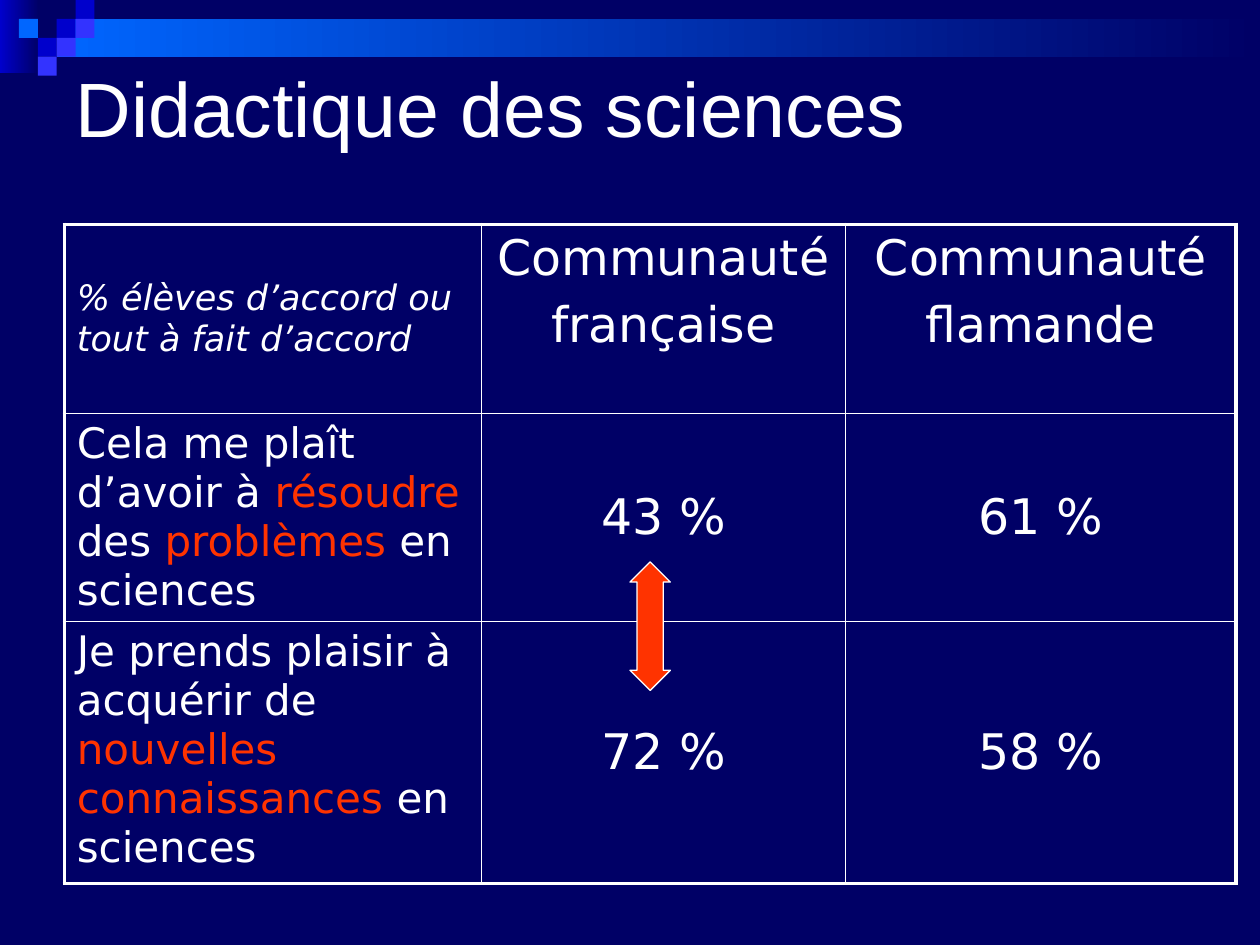
"""Build the "Didactique des sciences" slide comparing two school communities."""
from lxml import etree
from pptx import Presentation
from pptx.dml.color import RGBColor
from pptx.enum.shapes import MSO_SHAPE
from pptx.enum.text import MSO_ANCHOR, PP_ALIGN
from pptx.oxml.ns import qn
from pptx.util import Inches, Pt

LEFT, CENTER = PP_ALIGN.LEFT, PP_ALIGN.CENTER
TOP, MIDDLE = MSO_ANCHOR.TOP, MSO_ANCHOR.MIDDLE
RECTANGLE, DOUBLE_ARROW = MSO_SHAPE.RECTANGLE, MSO_SHAPE.UP_DOWN_ARROW

COLORS = {
    "navy": "000066",
    "blue": "0000CC",
    "azure": "0066FF",
    "violet": "3333FF",
    "text": "FFFFFF",
    "accent": "FF3300",
}

HEADING = "Didactique des sciences"
LEGEND = [[("% élèves d’accord ou tout à fait d’accord", "text")]]
COMMUNITIES = [
    [[("Communauté", "text")], [("française", "text")]],
    [[("Communauté", "text")], [("flamande", "text")]],
]
STATEMENTS = [
    ([[("Cela me plaît d’avoir à ", "text"), ("résoudre", "accent"), (" des ", "text"),
       ("problèmes", "accent"), (" en sciences", "text")]], ["43 %", "61 %"]),
    ([[("Je prends plaisir à acquérir de ", "text"), ("nouvelles connaissances", "accent"),
       (" en sciences", "text")]], ["72 %", "58 %"]),
]
COLUMN_WIDTHS = [3.31, 2.89, 3.1]
ROW_HEIGHTS = [1.5, 1.65, 2.08]
TABLE_LEFT, TABLE_TOP = 0.51, 1.78

SQUARE = 0.15
BANDS = [
    ((0, 0, 0.31, 0.58), "blue"),
    ((3 * SQUARE, SQUARE, 10 - 3 * SQUARE, 2 * SQUARE), "azure"),
]
SQUARES = [
    (3, 1, "blue"), (4, 0, "blue"), (4, 1, "violet"), (2, 2, "blue"),
    (1, 1, "azure"), (3, 2, "violet"), (2, 3, "violet"),
]


def rgb(name):
    """Return the named colour."""
    return RGBColor.from_string(COLORS[name])


def write(frame, paragraphs, size, font="DejaVu Sans", align=LEFT, italic=False):
    """Fill a text frame with paragraphs made of (text, colour) runs."""
    for index, runs in enumerate(paragraphs):
        paragraph = frame.paragraphs[0] if index == 0 else frame.add_paragraph()
        paragraph.alignment = align
        paragraph.space_before = Pt(0.2 * size if index else 0)
        for text, color in runs:
            run = paragraph.add_run()
            run.text = text
            run.font.name, run.font.size = font, Pt(size)
            run.font.bold, run.font.italic = False, italic
            run.font.color.rgb = rgb(color)


def add_plain_shape(slide, kind, box):
    """Add a shape with neither shadow nor outline."""
    shape = slide.shapes.add_shape(kind, *map(Inches, box))
    shape.shadow.inherit = False
    shape.line.fill.background()
    return shape


def add_decoration(slide):
    """Draw the fading bands and the mosaic at the top."""
    for box, color in BANDS:
        fill = add_plain_shape(slide, RECTANGLE, box).fill
        fill.gradient()
        fill.gradient_angle = 0
        for stop, name in zip(fill.gradient_stops, (color, "navy")):
            stop.color.rgb = rgb(name)
    for column, row, color in SQUARES:
        box = (column * SQUARE, row * SQUARE, SQUARE, SQUARE)
        fill = add_plain_shape(slide, RECTANGLE, box).fill
        fill.solid()
        fill.fore_color.rgb = rgb(color)


def set_borders(cell, outer_sides):
    """Draw thick lines on the outer sides and thin ones elsewhere."""
    properties = cell._tc.get_or_add_tcPr()
    for side in "LRTB":
        width = Pt(2.25 if side in outer_sides else 1)
        line = etree.SubElement(properties, qn(f"a:ln{side}"), w=str(width))
        solid = etree.SubElement(line, qn("a:solidFill"))
        etree.SubElement(solid, qn("a:srgbClr"), val=COLORS["text"])


def add_results(slide):
    """Add the table of agreement by statement and community."""
    size = len(ROW_HEIGHTS), len(COLUMN_WIDTHS)
    box = TABLE_LEFT, TABLE_TOP, sum(COLUMN_WIDTHS), sum(ROW_HEIGHTS)
    table = slide.shapes.add_table(*size, *map(Inches, box)).table
    table.first_row = table.horz_banding = False
    for column, width in zip(table.columns, COLUMN_WIDTHS):
        column.width = Inches(width)
    for row, height in zip(table.rows, ROW_HEIGHTS):
        row.height = Inches(height)

    last_row, last_column = size[0] - 1, size[1] - 1
    for r in range(size[0]):
        for c in range(size[1]):
            cell = table.cell(r, c)
            edges = {"L": c == 0, "R": c == last_column, "T": r == 0, "B": r == last_row}
            set_borders(cell, [side for side, outer in edges.items() if outer])
            cell.fill.background()
            cell.vertical_anchor = MIDDLE if (r == 0) == (c == 0) else TOP

    write(table.cell(0, 0).text_frame, LEGEND, 20, italic=True)
    for c, community in enumerate(COMMUNITIES, 1):
        write(table.cell(0, c).text_frame, community, 28, align=CENTER)
    for r, (statement, shares) in enumerate(STATEMENTS, 1):
        write(table.cell(r, 0).text_frame, statement, 24)
        for c, share in enumerate(shares, 1):
            write(table.cell(r, c).text_frame, [[(share, "text")]], 28, align=CENTER)


def add_contrast_arrow(slide):
    """Link the two French-speaking results across the row boundary."""
    width, height = 0.32, 1.02
    boundary = TABLE_TOP + sum(ROW_HEIGHTS[:2])
    box = (5, boundary + 0.04 - height / 2, width, height)
    arrow = add_plain_shape(slide, DOUBLE_ARROW, box)
    arrow.adjustments[0], arrow.adjustments[1] = 0.5, 0.65
    arrow.fill.solid()
    arrow.fill.fore_color.rgb = rgb("accent")
    arrow.line.color.rgb = rgb("text")
    arrow.line.width = Pt(0.75)


def main():
    """Assemble and save the slide."""
    deck = Presentation()
    deck.slide_width, deck.slide_height = Inches(10), Inches(7.5)
    slide = deck.slides.add_slide(deck.slide_layouts[5])
    slide.background.fill.solid()
    slide.background.fill.fore_color.rgb = rgb("navy")
    add_decoration(slide)

    title = slide.shapes.title
    title.left, title.top, title.width, title.height = map(Inches, (0.5, 0.21, 9.5, 1.27))
    title.text_frame.vertical_anchor = MIDDLE
    write(title.text_frame, [[(HEADING, "text")]], 44, font="Arial")

    add_results(slide)
    add_contrast_arrow(slide)
    deck.save("out.pptx")


if __name__ == "__main__":
    main()
